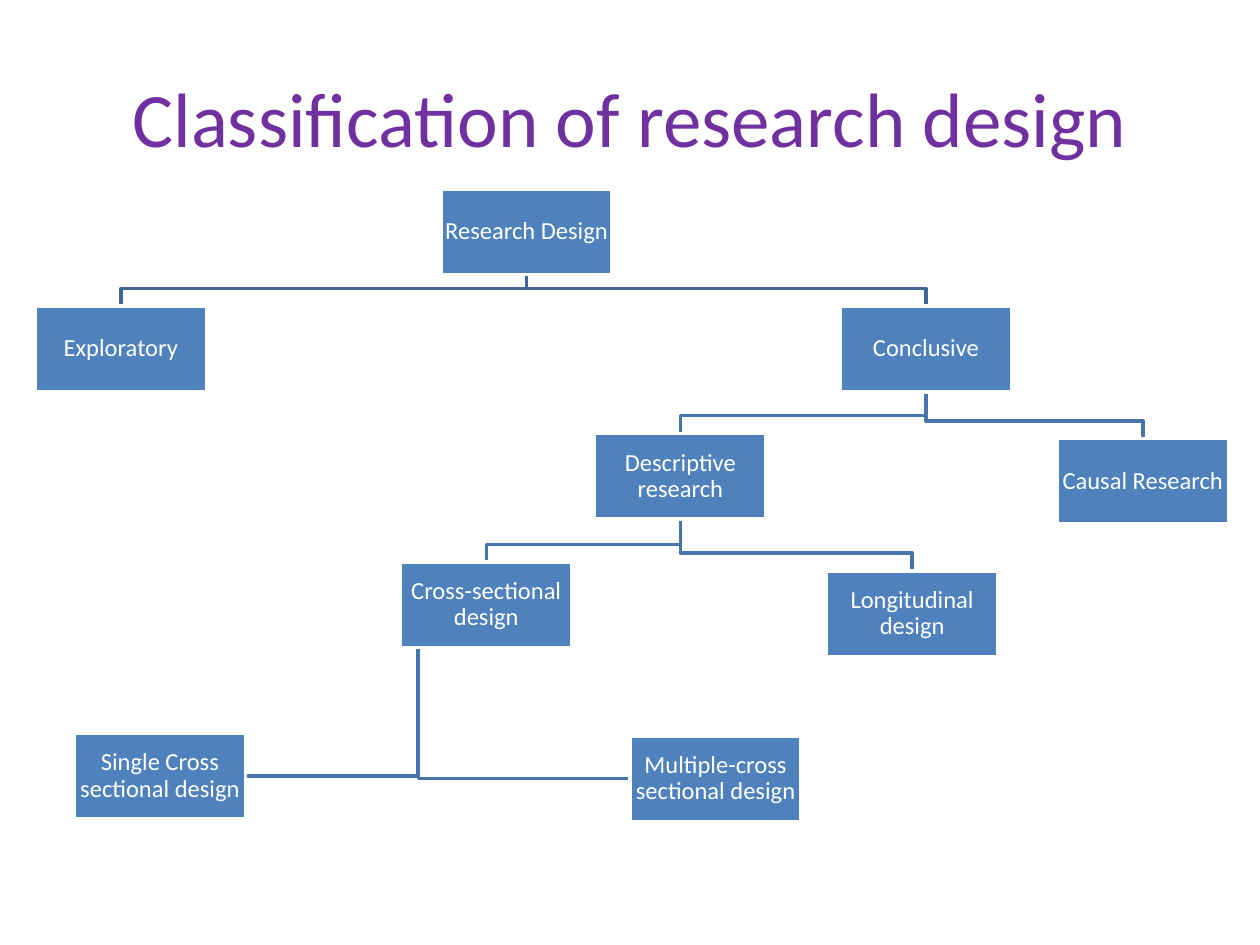
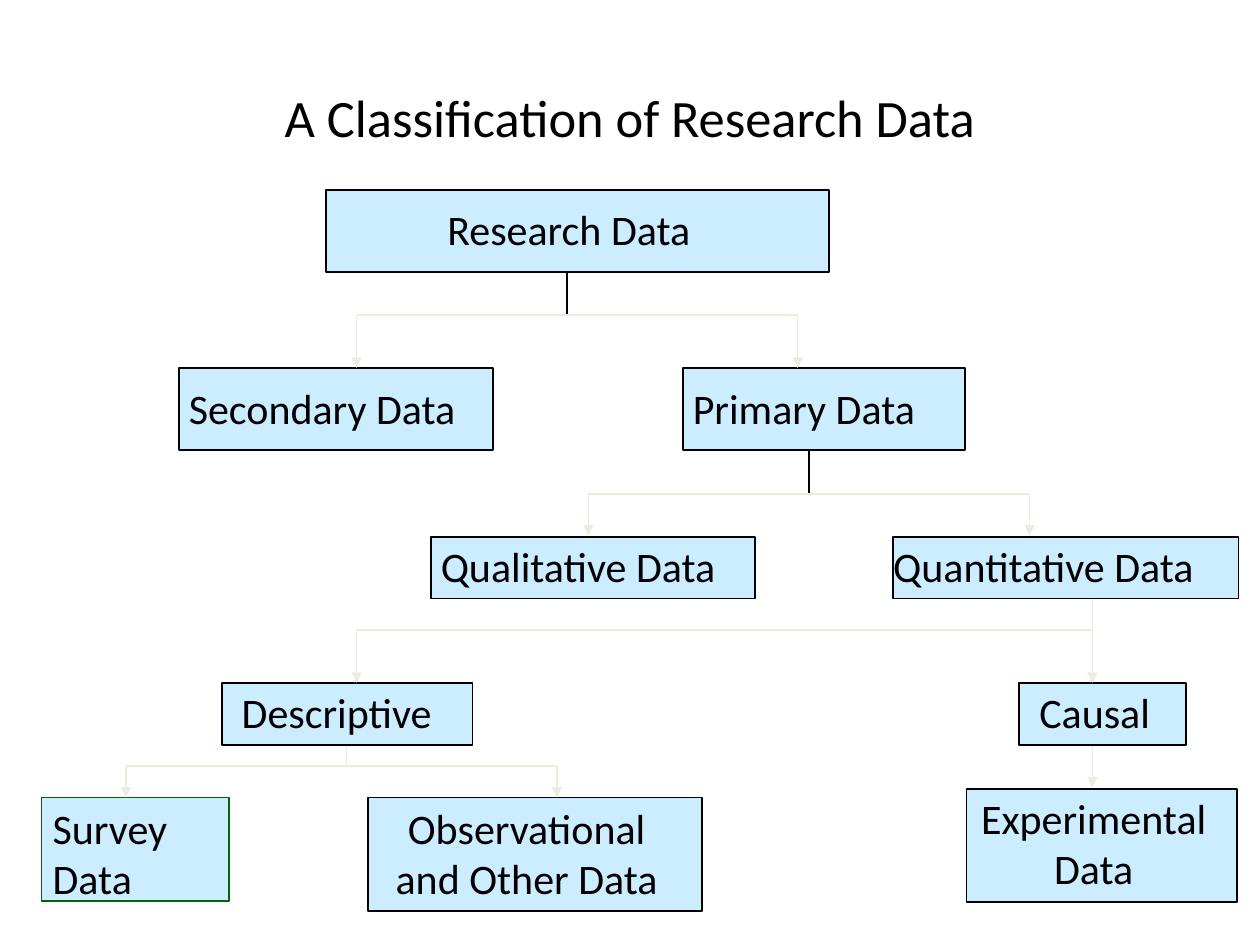
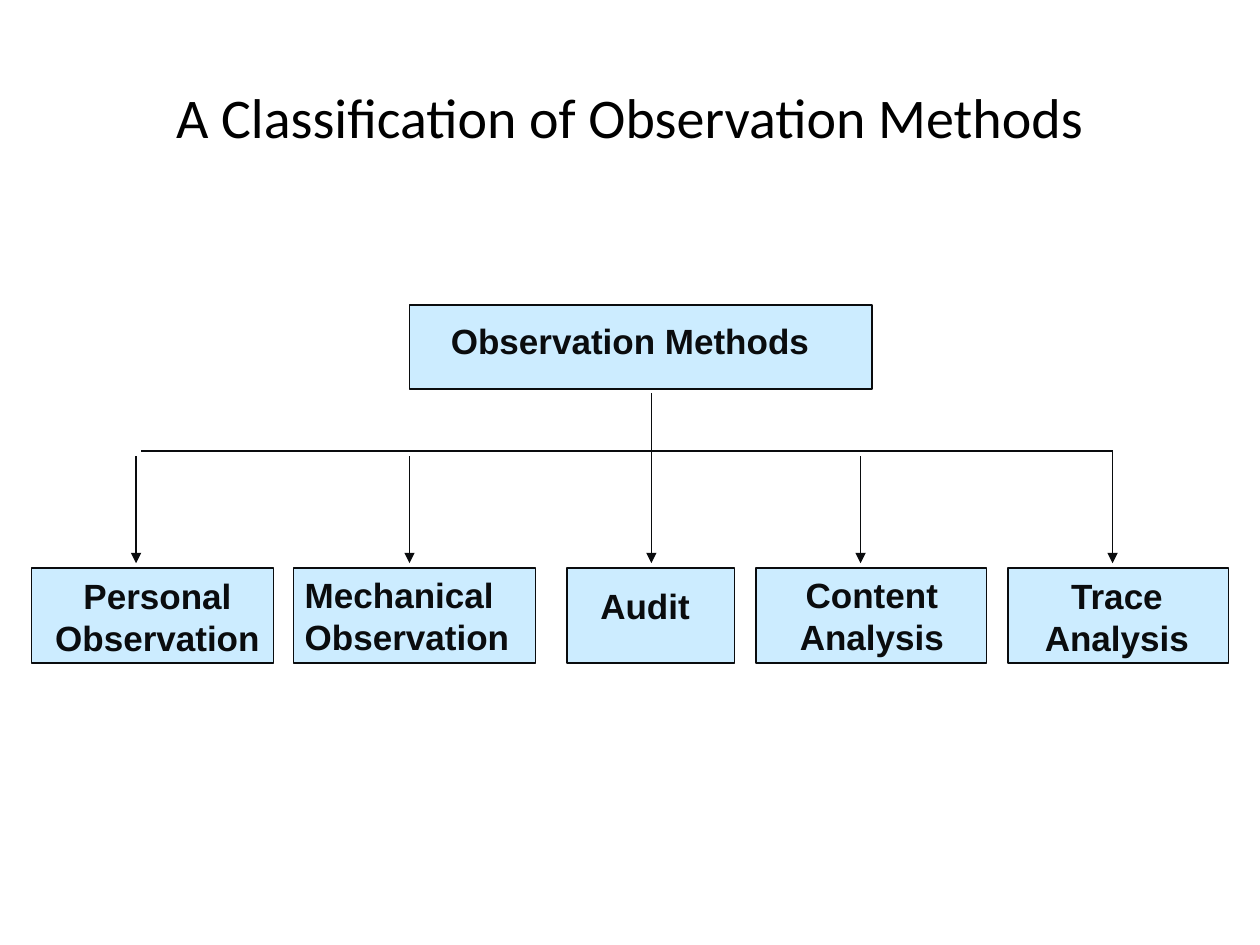
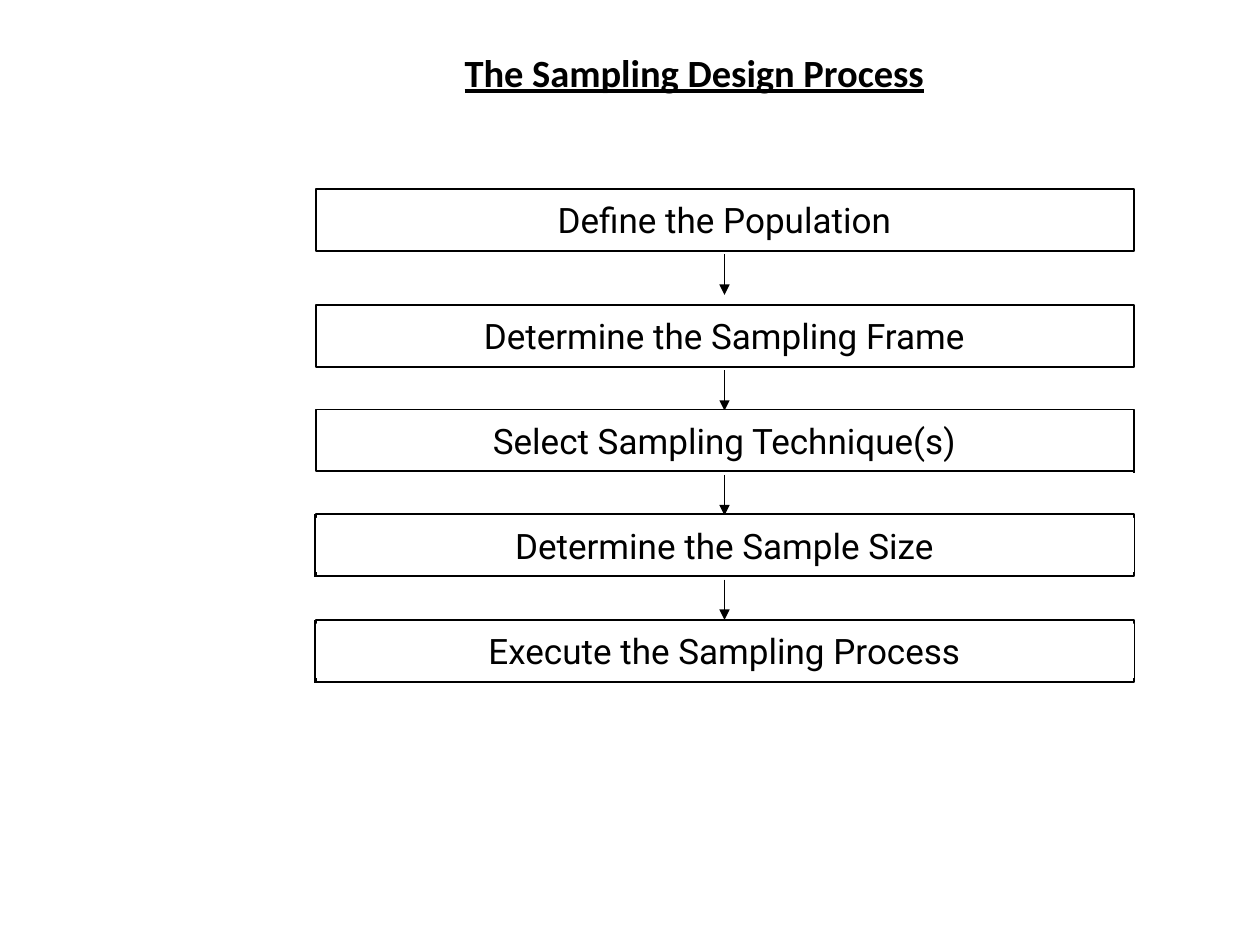
"""Build four slides of research classification and sampling diagrams."""
import dataclasses
import itertools
import typing

import lxml.etree
import pptx
import pptx.dml.color
import pptx.enum.shapes
import pptx.enum.text
import pptx.oxml.ns
import pptx.util

PX = 9144
ALIGN = pptx.enum.text.PP_ALIGN


@dataclasses.dataclass(frozen=True)
class Theme:
    """Colours, fonts and type sizes of the deck."""
    black: str = "000000"
    ink: str = "0A0C0E"
    white: str = "FFFFFF"
    purple: str = "7030A0"
    blue: str = "4F81BD"
    link: str = "4875AC"
    top_link: str = "3F6797"
    sky: str = "CCECFF"
    green: str = "006600"
    pale: str = "EEECE1"
    body_font: str = "Calibri"
    method_font: str = "Arial"
    step_font: str = "Roboto"
    node_size: int = 14
    label_size: int = 24
    small_size: int = 20


THEME = Theme()


class Area(typing.NamedTuple):
    """A rectangle in px."""
    left: int
    top: int
    width: int
    height: int


@dataclasses.dataclass(frozen=True)
class Card:
    """A filled box with a label that has its own place."""
    text: str
    box: Area
    label: Area
    centred: bool = False
    outline: str = THEME.black


@dataclasses.dataclass(frozen=True)
class Fork:
    """A trunk that meets a bar with an arrow at each end."""
    trunk: int
    top: int
    bar: int
    ends: tuple[int, int]
    bottom: int
    trunk_colour: str = THEME.pale


def rgb(colour: str) -> pptx.dml.color.RGBColor:
    """Turn a hex colour into an RGBColor."""
    return pptx.dml.color.RGBColor.from_string(colour)


def emu(area: Area) -> list[int]:
    """Turn an area in px into EMU lengths."""
    return [length * PX for length in area]


def write_text(box, text: str, *, size: int, colour: str = THEME.black,
               font: str = THEME.body_font, bold: bool = False,
               underline: bool = False, centred: bool = True,
               middle: bool = False, spacing: float = 1.0,
               inset: tuple[int, int] = (10, 5)) -> None:
    """Put one formatted paragraph into a shape."""
    frame = box.text_frame
    frame.word_wrap = True
    anchors = pptx.enum.text.MSO_ANCHOR
    frame.vertical_anchor = anchors.MIDDLE if middle else anchors.TOP
    frame.margin_left = frame.margin_right = inset[0] * PX
    frame.margin_top = frame.margin_bottom = inset[1] * PX
    para = frame.paragraphs[0]
    para.alignment = ALIGN.CENTER if centred else ALIGN.LEFT
    para.line_spacing = spacing
    span = para.add_run()
    span.text = text
    span.font.name = font
    span.font.size = pptx.util.Pt(size)
    span.font.bold = bold
    span.font.underline = underline
    span.font.color.rgb = rgb(colour)


def add_label(page, area: Area, text: str, **style):
    """Add a text box and return it."""
    box = page.shapes.add_textbox(*emu(area))
    write_text(box, text, **style)
    return box


def add_box(page, area: Area, fill: str, outline: str, width: int = 1):
    """Add a filled, outlined rectangle and return it."""
    box = page.shapes.add_shape(pptx.enum.shapes.MSO_SHAPE.RECTANGLE, *emu(area))
    box.shadow.inherit = False
    box.fill.solid()
    box.fill.fore_color.rgb = rgb(fill)
    box.line.color.rgb = rgb(outline)
    box.line.width = pptx.util.Pt(width)
    return box


def add_line(page, start: tuple[int, int], end: tuple[int, int], colour: str,
             arrow: bool = False, width: float = 1) -> None:
    """Add a straight line, with an arrowhead at its end if asked."""
    line = page.shapes.add_connector(
        pptx.enum.shapes.MSO_CONNECTOR.STRAIGHT,
        *(length * PX for length in start + end))
    line.line.color.rgb = rgb(colour)
    line.line.width = pptx.util.Pt(width)
    if arrow:
        lxml.etree.SubElement(line.line._get_or_add_ln(),
                              pptx.oxml.ns.qn("a:tailEnd"), type="triangle")
    lxml.etree.SubElement(line._element.spPr, pptx.oxml.ns.qn("a:effectLst"))


def add_path(page, points: list[tuple[int, int]], colour: str) -> None:
    """Add an open outline through the points."""
    builder = page.shapes.build_freeform(*points[0], scale=float(PX))
    builder.add_line_segments(points[1:], close=False)
    path = builder.convert_to_shape()
    path.shadow.inherit = False
    path.fill.background()
    path.line.color.rgb = rgb(colour)
    path.line.width = pptx.util.Pt(2)


def add_fork(page, fork: Fork) -> None:
    """Draw a fork."""
    add_line(page, (fork.trunk, fork.top), (fork.trunk, fork.bar), fork.trunk_colour)
    add_line(page, (fork.ends[0], fork.bar), (fork.ends[1], fork.bar), THEME.pale)
    for x in fork.ends:
        add_line(page, (x, fork.bar), (x, fork.bottom), THEME.pale, arrow=True)


def add_card(page, card: Card, **style) -> None:
    """Draw a card and its label."""
    add_box(page, card.box, THEME.sky, card.outline)
    add_label(page, card.label, card.text, centred=card.centred, **style)


def add_page(deck, title: str, *, size: int, area: Area = Area(50, 30, 900, 125),
             **style):
    """Add a blank slide with a title and return it."""
    page = deck.slides.add_slide(deck.slide_layouts[6])
    add_label(page, area, title, size=size, middle=True, **style)
    return page


def build_design(deck) -> None:
    """Draw the tree of research designs."""
    page = add_page(deck, "Classification of research design", size=44,
                    colour=THEME.purple)
    width, height, bend, indent = 136, 68, 14, 14
    nodes = {
        "Research Design": (350, 150),
        "Exploratory": (28, 243),
        "Conclusive": (667, 243),
        "Causal Research": (839, 348),
        "Descriptive research": (472, 344),
        "Cross-sectional design": (318, 446),
        "Single Cross sectional design": (59, 582),
        "Multiple-cross sectional design": (500, 584),
        "Longitudinal design": (656, 453),
    }
    branches = {
        "Research Design": ("Exploratory", "Conclusive"),
        "Conclusive": ("Descriptive research", "Causal Research"),
        "Descriptive research": ("Cross-sectional design", "Longitudinal design"),
    }
    for parent, children in branches.items():
        left, top = nodes[parent]
        start = left + width // 2
        colour = THEME.top_link if parent == "Research Design" else THEME.link
        for child in children:
            end, child_top = nodes[child][0] + width // 2, nodes[child][1]
            add_path(page, [(start, top + height), (start, child_top - bend),
                            (end, child_top - bend), (end, child_top)], colour)
    left, top = nodes["Cross-sectional design"]
    stem = left + indent
    for child, side in (("Single Cross sectional design", width),
                        ("Multiple-cross sectional design", 0)):
        child_left, child_top = nodes[child]
        middle = child_top + height // 2
        add_path(page, [(stem, top + height), (stem, middle),
                        (child_left + side, middle)], THEME.link)
    for text, place in nodes.items():
        box = add_box(page, Area(*place, width, height), THEME.blue, THEME.white, 2)
        write_text(box, text, size=THEME.node_size, colour=THEME.white,
                   middle=True, spacing=0.9, inset=(1, 1))


def build_data(deck) -> None:
    """Draw the tree of research data."""
    page = add_page(deck, "A Classification of Research Data", size=30)
    cards = [
        Card("Survey Data", Area(33, 633, 149, 82), Area(32, 632, 153, 90),
             outline=THEME.green),
        Card("Observational and Other Data", Area(292, 633, 265, 90),
             Area(290, 632, 256, 90), True),
        Card("Experimental Data", Area(767, 626, 215, 90),
             Area(757, 624, 222, 90), True),
        Card("Qualitative Data", Area(342, 426, 257, 49), Area(340, 424, 256, 50)),
        Card("Quantitative Data", Area(709, 426, 274, 49), Area(699, 424, 278, 50)),
        Card("Descriptive", Area(176, 542, 199, 49), Area(182, 540, 181, 50)),
        Card("Causal", Area(809, 542, 132, 49), Area(815, 540, 116, 50)),
        Card("Research Data", Area(259, 151, 399, 65), Area(344, 157, 215, 50), True),
        Card("Secondary Data", Area(142, 292, 249, 65), Area(140, 299, 252, 50)),
        Card("Primary Data", Area(542, 292, 224, 65), Area(540, 299, 211, 50)),
    ]
    forks = [
        Fork(450, 217, 250, (283, 633), 292, THEME.black),
        Fork(642, 358, 392, (467, 817), 425, THEME.black),
        Fork(867, 475, 500, (283, 867), 542),
        Fork(275, 592, 608, (100, 442), 633),
    ]
    for card in cards:
        add_card(page, card, size=THEME.label_size)
    for fork in forks:
        add_fork(page, fork)
    add_line(page, (867, 592), (867, 625), THEME.pale, arrow=True)


def build_methods(deck) -> None:
    """Draw the row of observation methods."""
    page = add_page(deck, "A Classification of Observation Methods", size=32)
    top, height, bar, tip = 451, 75, 358, 447
    add_line(page, (112, bar), (883, bar), THEME.ink)
    for x, start in ((108, 362), (325, 362), (517, 312), (683, 362), (883, bar)):
        add_line(page, (x, start), (x, tip), THEME.ink, arrow=True)
    cards = [
        Card("Observation Methods", Area(325, 242, 367, 67), Area(348, 249, 361, 43)),
        Card("Personal Observation", Area(25, top, 192, height),
             Area(24, 451, 202, 76), True),
        Card("Mechanical Observation", Area(233, top, 192, height),
             Area(232, 450, 202, 76)),
        Card("Audit", Area(450, top, 133, height), Area(440, 459, 144, 43), True),
        Card("Content Analysis", Area(600, top, 183, height),
             Area(599, 450, 186, 76), True),
        Card("Trace Analysis", Area(800, top, 175, height),
             Area(798, 451, 177, 76), True),
    ]
    for card in cards:
        add_card(page, dataclasses.replace(card, outline=THEME.ink),
                 size=THEME.small_size, font=THEME.method_font,
                 colour=THEME.ink, bold=True)


def build_sampling(deck) -> None:
    """Draw the steps of the sampling process."""
    page = add_page(deck, "The Sampling Design Process", size=22,
                    area=Area(125, 17, 852, 80), bold=True, underline=True)
    centre, left, width, height = 575, 251, 649, 49
    steps = [
        ("Define the Population", 150, 300),
        ("Determine the Sampling Frame", 242, 450),
        ("Select Sampling Technique(s)", 325, 600),
        ("Determine the Sample Size", 408, 650),
        ("Execute the Sampling Process", 492, 650),
    ]
    for (text, top, label_width), following in itertools.zip_longest(steps, steps[1:]):
        add_box(page, Area(left, top, width, height), THEME.white, THEME.black)
        label = add_label(
            page, Area(centre - label_width // 2, top + 3, label_width, 43),
            text, size=THEME.small_size, font=THEME.step_font)
        label.fill.solid()
        label.fill.fore_color.rgb = rgb(THEME.white)
        if following:
            add_line(page, (centre, top + 52), (centre, top + 84),
                     THEME.black, arrow=True)
    for x, top in ((250, 408), (250, 492), (900, 325)):
        add_line(page, (x, top), (x, top + 50), THEME.black, width=0.75)


def main() -> None:
    """Build and save the deck."""
    deck = pptx.Presentation()
    deck.slide_width, deck.slide_height = 1000 * PX, 750 * PX
    for build in (build_design, build_data, build_methods, build_sampling):
        build(deck)
    deck.save("out.pptx")


if __name__ == "__main__":
    main()
